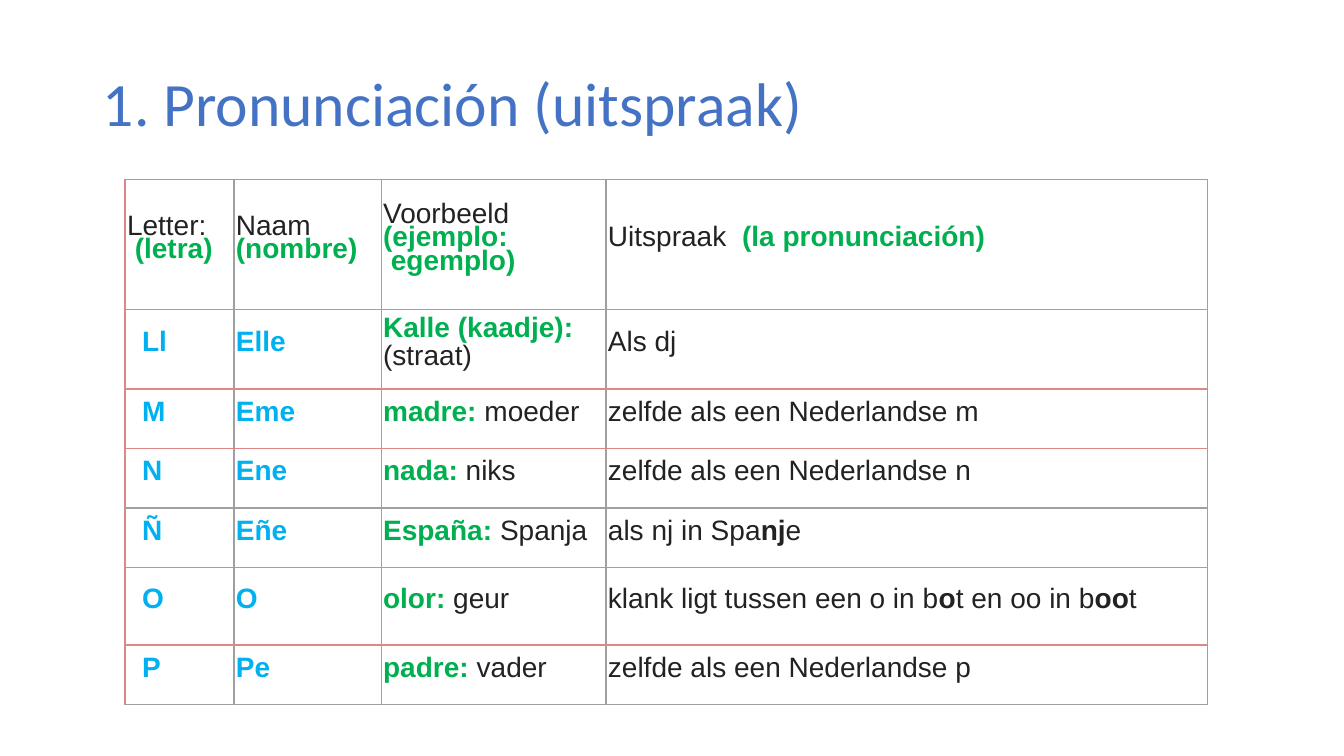
from dataclasses import dataclass
from typing import NamedTuple

from lxml import etree
from pptx import Presentation
from pptx import util as u
from pptx.dml.color import RGBColor
from pptx.enum import text
from pptx.oxml.ns import qn

PX = 9144  # EMU in one px, at 100 px to the inch
BLUE, CYAN, GREEN, INK = "4472C4", "00B0F0", "00B050", "222222"
ROSE, GREY = "DD8888", "A0A0A0"

COLUMN_WIDTHS = [108, 146, 223, 597]
ROW_HEIGHTS = [129, 79, 59, 59, 59, 77, 59]
ROSE_RULES = {2, 3, 5, 6}  # horizontal rules, counted from the top edge
CELL_INSET = 2
LETTER_INSET = 17


class Run(NamedTuple):
    words: str
    color: str = INK
    bold: bool = False


Line = list[Run]


@dataclass
class Letter:
    sign: str
    name: str
    example: list[Line]
    sound: Line

    def cells(self) -> list[list[Line]]:
        return [[[Run(self.sign, CYAN, True)]], [[Run(self.name, CYAN, True)]],
                self.example, [self.sound]]


def green(words: str) -> Run:
    return Run(words, GREEN, True)


def strong(words: str) -> Run:
    return Run(words, bold=True)


def example(spanish: str, dutch: str) -> list[Line]:
    return [[green(spanish), Run(f" {dutch}")]]


def same_as_dutch(letter: str) -> Line:
    return [Run(f"zelfde als een Nederlandse {letter}")]


HEADINGS: list[list[Line]] = [
    [[Run("Letter:")], [green(" (letra)")]],
    [[Run("Naam")], [green("(nombre)")]],
    [[Run("Voorbeeld")], [green("(ejemplo:")], [green(" egemplo)")]],
    [[Run("Uitspraak  "), green("(la pronunciación)")]],
]
LETTERS = [
    Letter("Ll", "Elle", [[green("Kalle (kaadje):")], [Run("(straat)")]], [Run("Als dj")]),
    Letter("M", "Eme", example("madre:", "moeder"), same_as_dutch("m")),
    Letter("N", "Ene", example("nada:", "niks"), same_as_dutch("n")),
    Letter("Ñ", "Eñe", example("España:", "Spanja"),
           [Run("als nj in Spa"), strong("nj"), Run("e")]),
    Letter("O", "O", example("olor:", "geur"),
           [Run("klank ligt tussen een o in b"), strong("o"), Run("t en oo in b"),
            strong("oo"), Run("t")]),
    Letter("P", "Pe", example("padre:", "vader"), same_as_dutch("p")),
]


def px(length: int) -> u.Emu:
    return u.Emu(length * PX)


def add_run(paragraph, run: Run, font: str, size: int) -> None:
    piece = paragraph.add_run()
    piece.text = run.words
    piece.font.name = font
    piece.font.size = u.Pt(size)
    piece.font.bold = run.bold
    piece.font.color.rgb = RGBColor.from_string(run.color)


def add_title(slide, words: str) -> None:
    title = slide.shapes.title
    title.left, title.top, title.width, title.height = map(px, (92, 33, 1150, 145))
    title.text_frame.vertical_anchor = text.MSO_ANCHOR.MIDDLE
    heading = title.text_frame.paragraphs[0]
    heading.alignment = text.PP_ALIGN.LEFT
    heading.line_spacing = 0.9
    add_run(heading, Run(words, BLUE), "Calibri", 44)


def set_borders(cell, row: int, column: int) -> None:
    """Draw the four sides ahead of the cell's fill, as the schema orders them."""
    sides = {
        "a:lnL": ROSE if column == 0 else GREY,
        "a:lnR": GREY,
        "a:lnT": ROSE if row in ROSE_RULES else GREY,
        "a:lnB": ROSE if row + 1 in ROSE_RULES else GREY,
    }
    properties = cell._tc.get_or_add_tcPr()
    for place, (tag, color) in enumerate(sides.items()):
        side = etree.Element(qn(tag), w=str(u.Pt(1)))
        fill = etree.SubElement(side, qn("a:solidFill"))
        etree.SubElement(fill, qn("a:srgbClr"), val=color)
        properties.insert(place, side)


def fill_cell(cell, lines: list[Line], is_heading: bool) -> None:
    cell.fill.background()
    cell.vertical_anchor = text.MSO_ANCHOR.MIDDLE
    cell.margin_left = cell.margin_right = px(CELL_INSET)
    cell.margin_top = cell.margin_bottom = px(CELL_INSET)
    frame = cell.text_frame
    for index, line in enumerate(lines):
        paragraph = frame.add_paragraph() if index else frame.paragraphs[0]
        paragraph.line_spacing = u.Pt(12)
        paragraph.space_before = u.Pt(2.4 if is_heading else 0)
        paragraph.space_after = u.Pt(2.4 if is_heading else 8)
        paragraph.alignment = text.PP_ALIGN.LEFT if is_heading else text.PP_ALIGN.JUSTIFY
        for run in line:
            add_run(paragraph, run, "Arial", 20)


def add_alphabet(slide) -> None:
    rows = [HEADINGS] + [letter.cells() for letter in LETTERS]
    alphabet = slide.shapes.add_table(
        len(rows), len(COLUMN_WIDTHS), px(124), px(178),
        px(sum(COLUMN_WIDTHS)), px(sum(ROW_HEIGHTS))).table
    alphabet.first_row = alphabet.horz_banding = False
    for column, width in zip(alphabet.columns, COLUMN_WIDTHS):
        column.width = px(width)
    for r, (cells, height) in enumerate(zip(rows, ROW_HEIGHTS)):
        alphabet.rows[r].height = px(height)
        for c, lines in enumerate(cells):
            cell = alphabet.cell(r, c)
            fill_cell(cell, lines, is_heading=r == 0)
            if r and c == 0:
                cell.margin_left = px(LETTER_INSET)
            set_borders(cell, r, c)


def main() -> None:
    deck = Presentation()
    deck.slide_width, deck.slide_height = px(1333), px(750)
    slide = deck.slides.add_slide(deck.slide_layouts[5])
    add_title(slide, "1. Pronunciación (uitspraak)")
    add_alphabet(slide)
    deck.save("out.pptx")


if __name__ == "__main__":
    main()
